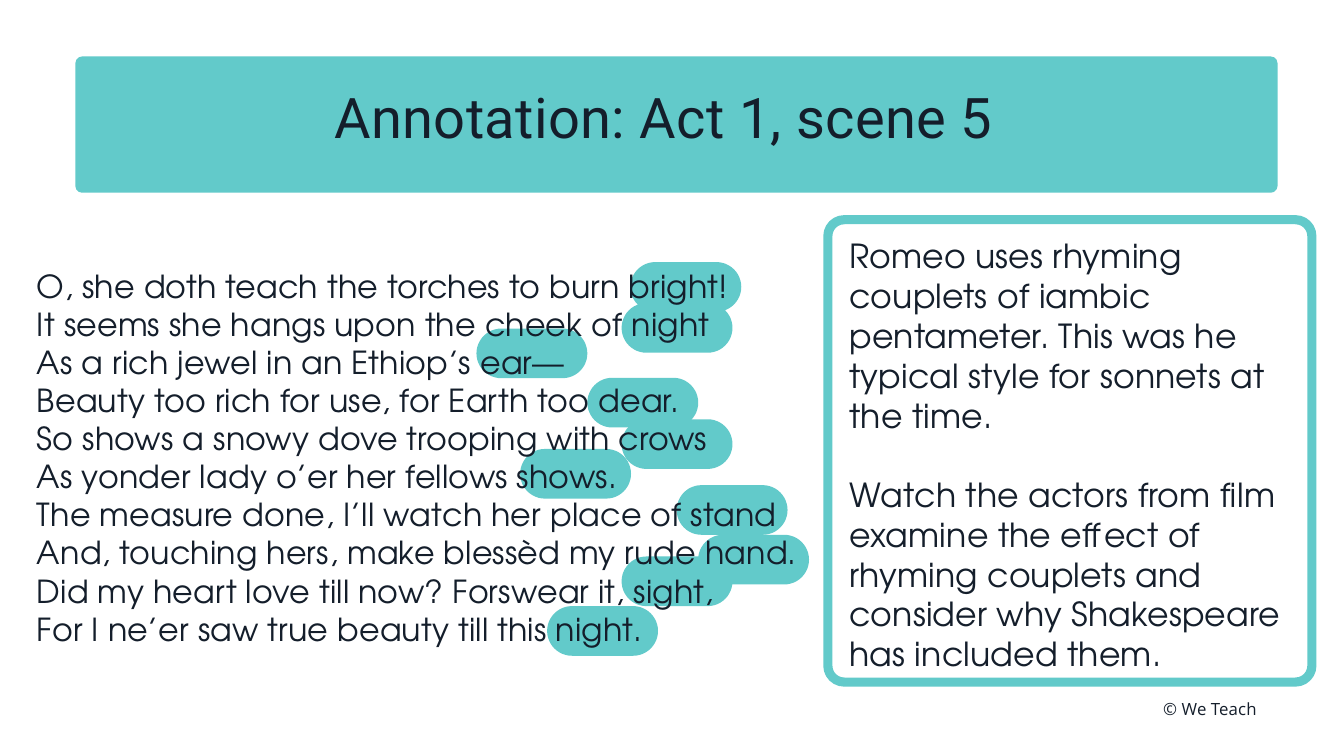
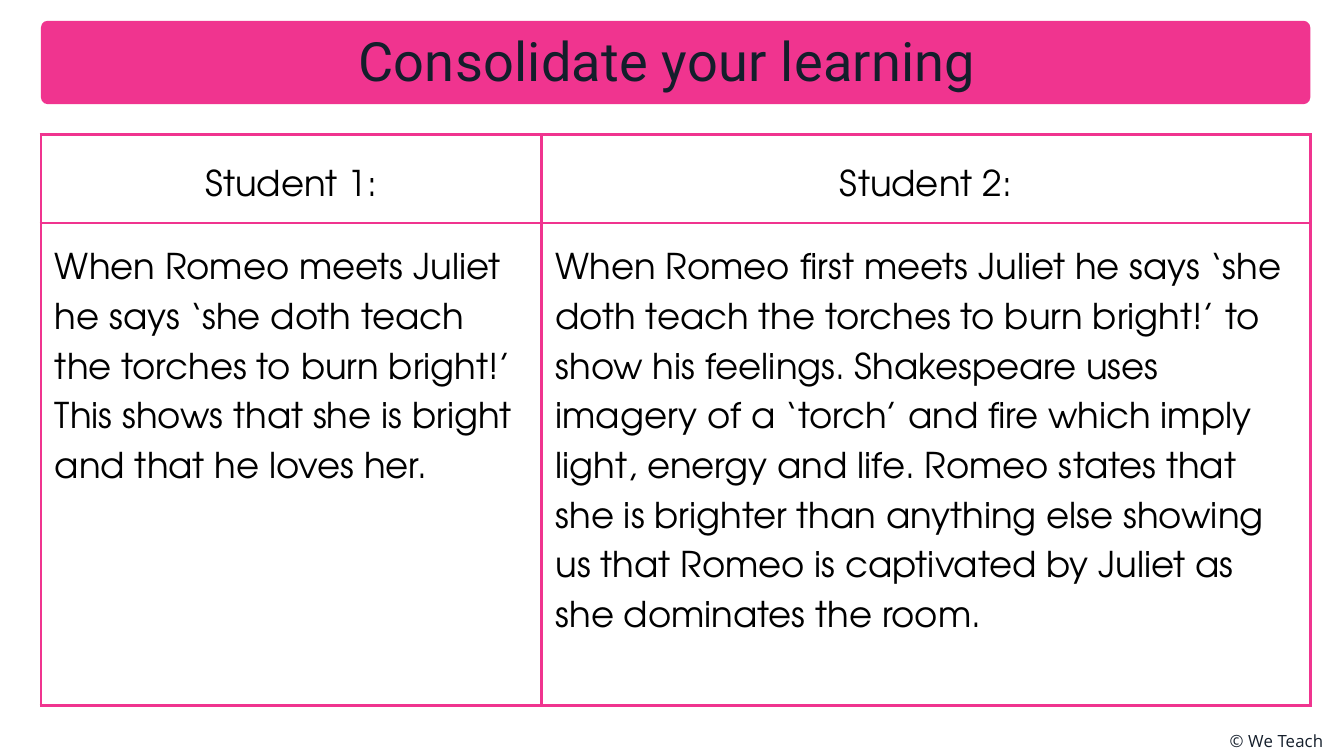
"""Builds two English lesson slides on rhyming couplets in Romeo and Juliet."""
from dataclasses import dataclass, replace

from lxml import etree
from pptx import Presentation, slide as s, table as t, util as u
from pptx.dml import color
from pptx.enum import shapes, text
from pptx.oxml import ns
from pptx.shapes import autoshape
from pptx.text import text as body

TEAL, PINK, INK, BLACK = "62CACA", "F0348F", "141E2B", "000000"
PILL_WIDTH, PILL_HEIGHT = 118.8, 53.2
CELL_INSET, BORDER = 15, 3


@dataclass(frozen=True)
class Style:
    """Look of a paragraph, with sizes in points."""
    font: str
    size: float
    leading: float
    colour: str = INK
    tracking: float = 0
    align: text.PP_ALIGN = text.PP_ALIGN.LEFT
    gap: float = 0


@dataclass(frozen=True)
class Area:
    """Place on a slide, in points."""
    left: float
    top: float
    width: float
    height: float

    def lengths(self) -> list[u.Length]:
        """Returns the four lengths in the order python-pptx takes them."""
        return [u.Pt(value) for value in (self.left, self.top, self.width, self.height)]


@dataclass(frozen=True)
class Frame:
    """Title banner, title and footer of a slide."""
    title: str
    style: Style
    banner: Area
    title_area: Area
    footer_area: Area
    fill: str


CENTRE = text.PP_ALIGN.CENTER
VERSE = Style("TeX Gyre Adventor", 34, 40.8, tracking=0.2)
NOTE = Style("TeX Gyre Adventor", 35.5, 42.6, tracking=0.2, gap=42.6)
ANSWER = Style("TeX Gyre Adventor", 38, 53.2, BLACK)
FOOTER = Style("Open Sans", 18, 21.6, tracking=0.1)
TITLE = Style("Roboto", 60, 72, tracking=0.4, align=CENTRE)

ANNOTATION = Frame(
    "Annotation: Act 1, scene 5", TITLE, Area(80.8, 60.5, 1288, 146),
    Area(236, 88.6, 951, 80.6), Area(1246.3, 748.8, 122.4, 24.5), TEAL)
CONSOLIDATION = Frame(
    "Consolidate your learning", replace(TITLE, size=58, leading=69.6, tracking=0.3),
    Area(43.9, 22.3, 1360, 89.3), Area(266, 29.5, 898.6, 77), Area(1317.6, 782.6, 122.4, 24.5), PINK)

VERSE_LINES = [
    "O, she doth teach the torches to burn bright!",
    "It seems she hangs upon the cheek of night",
    "As a rich jewel in an Ethiop’s ear—",
    "Beauty too rich for use, for Earth too dear.",
    "So shows a snowy dove trooping with crows",
    "As yonder lady o’er her fellows shows.",
    "The measure done, I’ll watch her place of stand",
    "And, touching hers, make blessèd my rude hand.",
    "Did my heart love till now? Forswear it, sight,",
    "For I ne’er saw true beauty till this night.",
]
RHYME_CORNERS = [
    (675.4, 280.8), (666, 324.7), (510.5, 352), (629.3, 404.8), (666, 449.2),
    (557.3, 481), (725, 519.8), (748, 573), (666, 596.2), (586.2, 649.4),
]
NOTES = [
    "Romeo uses rhyming couplets of iambic pentameter. This was he typical style "
    "for sonnets at the time.",
    "Watch the actors from film examine the effect of rhyming couplets and consider "
    "why Shakespeare has included them.",
]
STUDENT_ROWS = [
    ["Student 1:", "Student 2:"],
    ["When Romeo meets Juliet he says ‘she doth teach the torches to burn bright!’ "
     "This shows that she is bright and that he loves her.",
     "When Romeo first meets Juliet he says ‘she doth teach the torches to burn bright!’ "
     "to show his feelings. Shakespeare uses imagery of a ‘torch’ and fire which imply "
     "light, energy and life. Romeo states that she is brighter than anything else showing "
     "us that Romeo is captivated by Juliet as she dominates the room."],
]
COLUMN_WIDTHS, ROW_HEIGHTS = [536.4, 823.7], [95, 517]


def rgb(code: str) -> color.RGBColor:
    """Turns a hex string into a colour."""
    return color.RGBColor.from_string(code)


def write(frame: body.TextFrame, lines: list[str], style: Style) -> None:
    """Writes one paragraph per line in the given style."""
    frame.word_wrap = True
    for index, line in enumerate(lines):
        para = frame.add_paragraph() if index else frame.paragraphs[0]
        para.alignment = style.align
        para.line_spacing = u.Pt(style.leading)
        if index:
            para.space_before = u.Pt(style.gap)
        span = para.add_run()
        span.text = line
        span.font.name = style.font
        span.font.size = u.Pt(style.size)
        span.font.color.rgb = rgb(style.colour)
        if style.tracking:
            span._r.get_or_add_rPr().set("spc", str(round(style.tracking * 100)))


def set_insets(holder: body.TextFrame | t._Cell, inset: float) -> None:
    """Gives all four sides the same inset."""
    for side in ("left", "top", "right", "bottom"):
        setattr(holder, f"margin_{side}", u.Pt(inset))


def add_text(page: s.Slide, area: Area, lines: list[str], style: Style) -> None:
    """Adds a text box without insets."""
    frame = page.shapes.add_textbox(*area.lengths()).text_frame
    set_insets(frame, 0)
    write(frame, lines, style)
    frame.auto_size = text.MSO_AUTO_SIZE.SHAPE_TO_FIT_TEXT


def add_rounded(page: s.Slide, area: Area, radius: float) -> autoshape.Shape:
    """Adds a rounded rectangle with no fill and no line."""
    box = page.shapes.add_shape(shapes.MSO_SHAPE.ROUNDED_RECTANGLE, *area.lengths())
    box.adjustments[0] = radius / min(area.width, area.height)
    box.shadow.inherit = False
    box.fill.background()
    box.line.fill.background()
    return box


def add_filled(page: s.Slide, area: Area, radius: float, fill: str) -> None:
    """Adds a filled rounded rectangle."""
    box = add_rounded(page, area, radius)
    box.fill.solid()
    box.fill.fore_color.rgb = rgb(fill)


def add_page(deck: Presentation, frame: Frame) -> s.Slide:
    """Adds a blank slide with its banner, title and footer."""
    page = deck.slides.add_slide(deck.slide_layouts[6])
    add_filled(page, frame.banner, 7.2, frame.fill)
    add_text(page, frame.title_area, [frame.title], frame.style)
    add_text(page, frame.footer_area, ["© We Teach"], FOOTER)
    return page


def set_borders(cell: t._Cell, colour: str) -> None:
    """Draws the four borders of a table cell."""
    properties = cell._tc.get_or_add_tcPr()
    for side in ("lnL", "lnR", "lnT", "lnB"):
        line = etree.SubElement(properties, ns.qn(f"a:{side}"), w=str(u.Pt(BORDER)))
        fill = etree.SubElement(line, ns.qn("a:solidFill"))
        etree.SubElement(fill, ns.qn("a:srgbClr"), val=colour)


def add_students(page: s.Slide, area: Area) -> None:
    """Adds the table that compares the two answers."""
    table = page.shapes.add_table(len(ROW_HEIGHTS), len(COLUMN_WIDTHS), *area.lengths()).table
    table.first_row = table.horz_banding = False
    for column, width in zip(table.columns, COLUMN_WIDTHS):
        column.width = u.Pt(width)
    for index, (row, height, answers) in enumerate(zip(table.rows, ROW_HEIGHTS, STUDENT_ROWS)):
        row.height = u.Pt(height)
        for cell, answer in zip(row.cells, answers):
            set_insets(cell, CELL_INSET)
            cell.vertical_anchor = text.MSO_ANCHOR.TOP if index else text.MSO_ANCHOR.MIDDLE
            set_borders(cell, PINK)
            cell.fill.background()
            write(cell.text_frame, [answer], ANSWER if index else replace(ANSWER, align=CENTRE))


def build_annotation(deck: Presentation) -> None:
    """Builds the annotated speech with its rhymes marked."""
    page = add_page(deck, ANNOTATION)
    for left, top in RHYME_CORNERS:
        add_filled(page, Area(left, top, PILL_WIDTH, PILL_HEIGHT), PILL_HEIGHT / 2, TEAL)
    add_text(page, Area(39.6, 285.8, 826.6, 445), VERSE_LINES, VERSE)
    panel = add_rounded(page, Area(887, 235.4, 518.6, 495.4), 17.5)
    panel.line.color.rgb = rgb(TEAL)
    panel.line.width = u.Pt(9.75)
    add_text(page, Area(910, 252.7, 476.6, 499), NOTES, NOTE)


def build_consolidation(deck: Presentation) -> None:
    """Builds the comparison of two student answers."""
    page = add_page(deck, CONSOLIDATION)
    add_students(page, Area(43.9, 144, sum(COLUMN_WIDTHS), sum(ROW_HEIGHTS)))


def main() -> None:
    """Builds and saves the deck."""
    deck = Presentation()
    deck.slide_width, deck.slide_height = u.Pt(1440), u.Pt(810)
    build_annotation(deck)
    build_consolidation(deck)
    deck.save("out.pptx")


if __name__ == "__main__":
    main()
